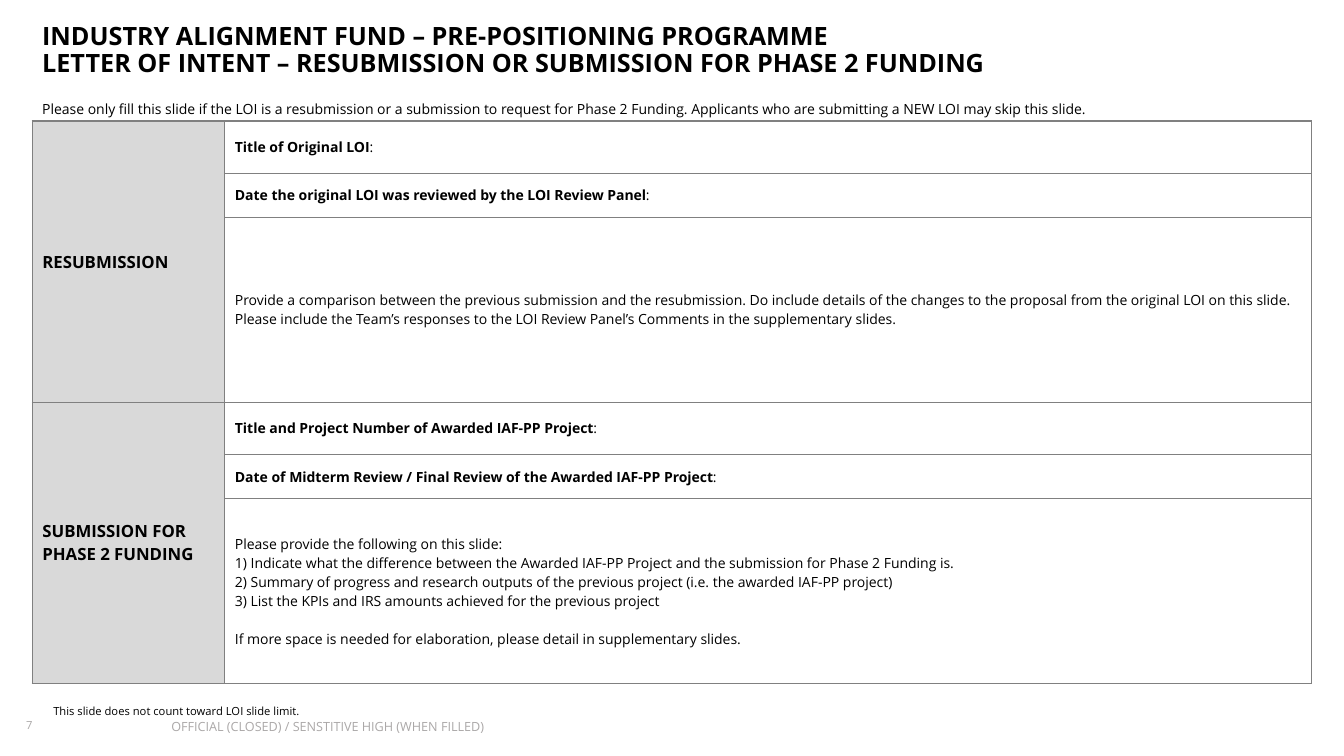
from lxml.etree import SubElement
from pptx import Presentation
from pptx.dml.color import RGBColor
from pptx.enum.text import MSO_ANCHOR, PP_ALIGN
from pptx.oxml.ns import qn
from pptx.util import Inches, Pt

COLORS = {"text": "000000", "muted": "ABA8A8", "label": "D9D9D9",
          "cell": "FFFFFF", "border": "808080"}
FONT = "Open Sans"


def style(paragraph, size, color="text", bold=None):
    paragraph.font.name = FONT
    paragraph.font.size = Pt(size)
    paragraph.font.bold = bold
    paragraph.font.color.rgb = RGBColor.from_string(COLORS[color])


def add_text(left, top, width, height, text, size, color="text", bold=False, inset=True):
    box = slide.shapes.add_textbox(Inches(left), Inches(top), Inches(width), Inches(height))
    frame = box.text_frame
    frame.word_wrap = True
    if not inset:
        frame.margin_left = frame.margin_right = frame.margin_top = frame.margin_bottom = 0
    paragraph = frame.paragraphs[0]
    paragraph.text = text
    style(paragraph, size, color, bold)
    return frame


presentation = Presentation()
presentation.slide_width = Inches(13.33)
presentation.slide_height = Inches(7.5)
slide = presentation.slides.add_slide(presentation.slide_layouts[6])

add_text(0.26, 7.13, 0.79, 0.19, "7", 8, "muted", inset=False)

title = add_text(0.32, 0.17, 11.13, 0.35,
                 "INDUSTRY ALIGNMENT FUND – PRE-POSITIONING PROGRAMME\v"
                 "LETTER OF INTENT – RESUBMISSION OR SUBMISSION FOR PHASE 2 FUNDING", 18, bold=True)
title.margin_top = Inches(0.07)
title.paragraphs[0].line_spacing = 0.88

instruction = add_text(0.32, 0.95, 11.55, 0.31,
                       "Please only fill this slide if the LOI is a resubmission or a submission to request "
                       "for Phase 2 Funding. Applicants who are submitting a NEW LOI may skip this slide.", 10)
instruction.paragraphs[0].alignment = PP_ALIGN.JUSTIFY

sections = [
    ("RESUBMISSION",
     ["Title of Original LOI", "Date the original LOI was reviewed by the LOI Review Panel"],
     ["Provide a comparison between the previous submission and the resubmission. "
      "Do include details of the changes to the proposal from the original LOI on this slide.",
      "Please include the Team’s responses to the LOI Review Panel’s Comments in the supplementary slides."]),
    ("SUBMISSION FOR PHASE 2 FUNDING",
     ["Title and Project Number of Awarded IAF-PP Project",
      "Date of Midterm Review / Final Review of the Awarded IAF-PP Project"],
     ["Please provide the following on this slide:",
      "1) Indicate what the difference between the Awarded IAF-PP Project and the submission for Phase 2 Funding is.",
      "2) Summary of progress and research outputs of the previous project (i.e. the awarded IAF-PP project)",
      "3) List the KPIs and IRS amounts achieved for the previous project",
      "If more space is needed for elaboration, please detail in supplementary slides."]),
]
column_widths = [1.91, 10.78]
row_heights = [0.52, 0.44, 1.83] * len(sections)

table = slide.shapes.add_table(len(row_heights), len(column_widths), Inches(0.32), Inches(1.2),
                               Inches(sum(column_widths)), Inches(sum(row_heights))).table
table.first_row = False
table.horz_banding = False
for column, width in zip(table.columns, column_widths):
    column.width = Inches(width)
for row, height in zip(table.rows, row_heights):
    row.height = Inches(height)

for index, (label, fields, guidance) in enumerate(sections):
    first_row = index * 3
    label_cell = table.cell(first_row, 0)
    label_cell.merge(table.cell(first_row + 2, 0))
    label_cell.text = label
    style(label_cell.text_frame.paragraphs[0], 12, bold=True)

    for offset, field in enumerate(fields):
        paragraph = table.cell(first_row + offset, 1).text_frame.paragraphs[0]
        for text, bold in ((field, True), (":", False)):
            run = paragraph.add_run()
            run.text = text
            run.font.bold = bold
        style(paragraph, 10)

    guidance_frame = table.cell(first_row + 2, 1).text_frame
    guidance_frame.text = "\n".join(guidance)
    for paragraph in guidance_frame.paragraphs:
        style(paragraph, 10, bold=False)

guidance_frame.paragraphs[-1].space_before = Pt(13.6)

for row in table.rows:
    for column_index, cell in enumerate(row.cells):
        cell.vertical_anchor = MSO_ANCHOR.MIDDLE
        properties = cell._tc.get_or_add_tcPr()
        for side in ("a:lnL", "a:lnR", "a:lnT", "a:lnB"):
            line = SubElement(properties, qn(side), w=str(Pt(1)))
            line_fill = SubElement(line, qn("a:solidFill"))
            SubElement(line_fill, qn("a:srgbClr"), val=COLORS["border"])
        cell.fill.solid()
        cell.fill.fore_color.rgb = RGBColor.from_string(COLORS["cell" if column_index else "label"])

add_text(0.43, 6.94, 9.61, 0.24, "This slide does not count toward LOI slide limit.", 8)
add_text(1.7, 7.13, 5.33, 0.19, "OFFICIAL (CLOSED) / SENSTITIVE HIGH (WHEN FILLED)", 9, "muted", inset=False)

presentation.save("out.pptx")
